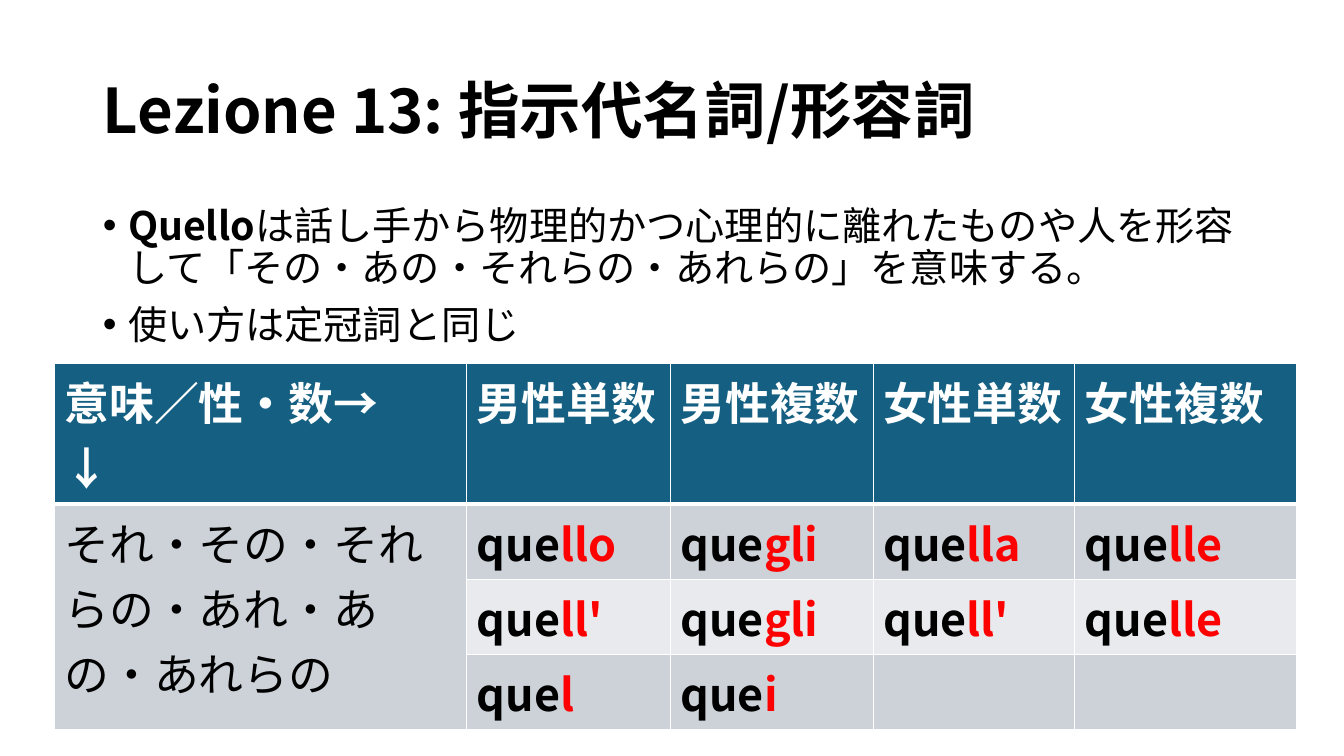
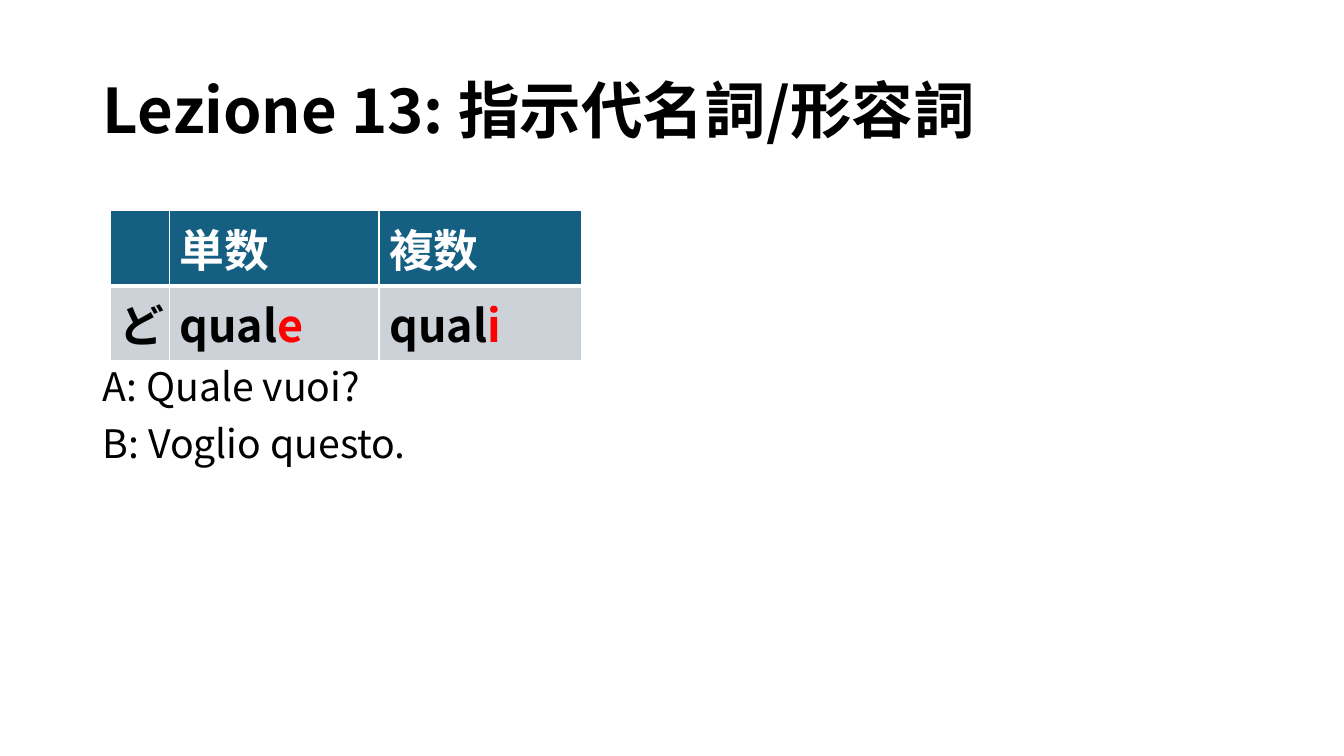
from lxml import etree
from pptx import Presentation
from pptx.dml.color import RGBColor
from pptx.enum.text import MSO_ANCHOR, MSO_AUTO_SIZE, PP_ALIGN
from pptx.oxml.ns import qn
from pptx.util import Inches, Pt

LEFT = PP_ALIGN.LEFT
TOP, MIDDLE = MSO_ANCHOR.TOP, MSO_ANCHOR.MIDDLE
NO_AUTOFIT = MSO_AUTO_SIZE.NONE

FONT = "Noto Sans CJK JP"
BLACK = RGBColor(0x00, 0x00, 0x00)
WHITE = RGBColor(0xFF, 0xFF, 0xFF)
ENDING_RED = RGBColor(0xFF, 0x00, 0x00)
HEADER_BLUE = RGBColor(0x15, 0x60, 0x82)
ROW_FILLS = (RGBColor(0xCC, 0xD2, 0xD8), RGBColor(0xE8, 0xEA, 0xED))

LESSON_TITLE = "Lezione 13: 指示代名詞/形容詞"
TITLE_BOX = (0.92, 0.4, 11.5, 1.45)
ROW_HEIGHT = 0.74
BULLET_INDENT = 0.25


def style_run(run, size, color=BLACK, bold=False):
    font = run.font
    font.size, font.bold, font.name = Pt(size), bold, FONT
    font.color.rgb = color
    properties = run._r.get_or_add_rPr()
    etree.SubElement(properties, qn("a:ea")).set("typeface", FONT)


def write_parts(paragraph, parts, size, styles):
    """Write consecutive parts, each with its (colour, bold) style."""
    paragraph.text = parts[0]
    for part in parts[1:]:
        paragraph.add_run().text = part
    # Line breaks split the first part into several runs of one style.
    first_count = len(paragraph.runs) - len(parts) + 1
    for index, run in enumerate(paragraph.runs):
        style_run(run, size, *styles[max(0, index - first_count + 1)])


def place(placeholder, box, anchor):
    placeholder.left, placeholder.top, placeholder.width, placeholder.height = map(Inches, box)
    frame = placeholder.text_frame
    frame.auto_size, frame.word_wrap = NO_AUTOFIT, True
    frame.vertical_anchor = anchor
    return frame


def add_lesson_slide(prs):
    slide = prs.slides.add_slide(prs.slide_layouts[1])
    paragraph = place(slide.shapes.title, TITLE_BOX, MIDDLE).paragraphs[0]
    write_parts(paragraph, [LESSON_TITLE], 44, [(BLACK, True)])
    paragraph.alignment, paragraph.line_spacing = LEFT, 0.9
    return slide


def set_marker(paragraph, bulleted):
    properties = paragraph._p.get_or_add_pPr()
    indent = Inches(BULLET_INDENT) if bulleted else 0
    properties.set("marL", str(indent))
    properties.set("indent", str(-indent))
    if bulleted:
        etree.SubElement(properties, qn("a:buFont")).set("typeface", "Arial")
        etree.SubElement(properties, qn("a:buChar")).set("char", "•")
    else:
        etree.SubElement(properties, qn("a:buNone"))


def fill_body(slide, box, lines, bulleted):
    """Write the lines; in a line of two parts the first is bold."""
    frame = place(slide.placeholders[1], box, TOP)
    for index, parts in enumerate(lines):
        paragraph = frame.add_paragraph() if index else frame.paragraphs[0]
        write_parts(paragraph, parts, 28, [(BLACK, len(parts) > 1), (BLACK, False)])
        paragraph.line_spacing, paragraph.space_before = 0.9, Pt(10)
        set_marker(paragraph, bulleted)


def set_borders(cell, top, bottom):
    properties = cell._tc.get_or_add_tcPr()
    widths = {"a:lnL": 1, "a:lnR": 1, "a:lnT": top, "a:lnB": bottom}
    for position, (side, width) in enumerate(widths.items()):
        line = etree.Element(qn(side), w=str(Pt(width)))
        fill = etree.SubElement(line, qn("a:solidFill"))
        etree.SubElement(fill, qn("a:srgbClr")).set("val", str(WHITE))
        properties.insert(position, line)


def add_forms_table(slide, left, top, widths, rows, header_height, label_bold):
    """Add a table whose cells read "stem|ending", with the ending in red."""
    height = header_height + ROW_HEIGHT * (len(rows) - 1)
    table = slide.shapes.add_table(
        len(rows), len(widths), Inches(left), Inches(top),
        Inches(sum(widths)), Inches(height)).table
    table.first_row = table.horz_banding = False
    for column, width in zip(table.columns, widths):
        column.width = Inches(width)
    for r, texts in enumerate(rows):
        is_header = r == 0
        table.rows[r].height = Inches(header_height if is_header else ROW_HEIGHT)
        for c, text in enumerate(texts):
            cell = table.cell(r, c)
            set_borders(cell, 3 if r == 1 else 1, 3 if is_header else 1)
            cell.fill.solid()
            cell.fill.fore_color.rgb = HEADER_BLUE if is_header else ROW_FILLS[(r - 1) % 2]
            if text:
                stem = (WHITE if is_header else BLACK, is_header or c > 0 or label_bold)
                write_parts(cell.text_frame.paragraphs[0], text.split("|"), 32,
                            [stem, (ENDING_RED, True)])
    return table


def build_quello_slide(prs):
    slide = add_lesson_slide(prs)
    fill_body(slide, (0.92, 2, 11.5, 4.76), [
        ["Quello", "は話し手から物理的かつ心理的に離れたものや人を形容して"
                   "「その・あの・それらの・あれらの」を意味する。"],
        ["使い方は定冠詞と同じ"],
    ], bulleted=True)
    table = add_forms_table(slide, 0.54, 3.61, (4.09, 2.02, 2.01, 2, 2.2), [
        ["意味／性・数→\n↓", "男性単数", "男性複数", "女性単数", "女性複数"],
        ["それ・その・それらの・あれ・あの・あれらの",
         "que|llo", "que|gli", "que|lla", "que|lle"],
        ["", "que|ll'", "que|gli", "que|ll'", "que|lle"],
        ["", "que|l", "que|i", "", ""],
    ], header_height=1.39, label_bold=False)
    table.cell(1, 0).merge(table.cell(3, 0))


def build_quale_slide(prs):
    slide = add_lesson_slide(prs)
    fill_body(slide, (0.92, 3.6, 11.5, 3.9),
              [["A: Quale vuoi?"], ["B: Voglio questo."]], bulleted=False)
    add_forms_table(slide, 1.09, 2.09, (0.59, 2.08, 2.01), [
        ["", "単数", "複数"],
        ["ど", "qual|e", "qual|i"],
    ], header_height=ROW_HEIGHT, label_bold=True)


def main():
    prs = Presentation()
    prs.slide_width, prs.slide_height = Inches(13.33), Inches(7.5)
    build_quello_slide(prs)
    build_quale_slide(prs)
    prs.save("out.pptx")


if __name__ == "__main__":
    main()
